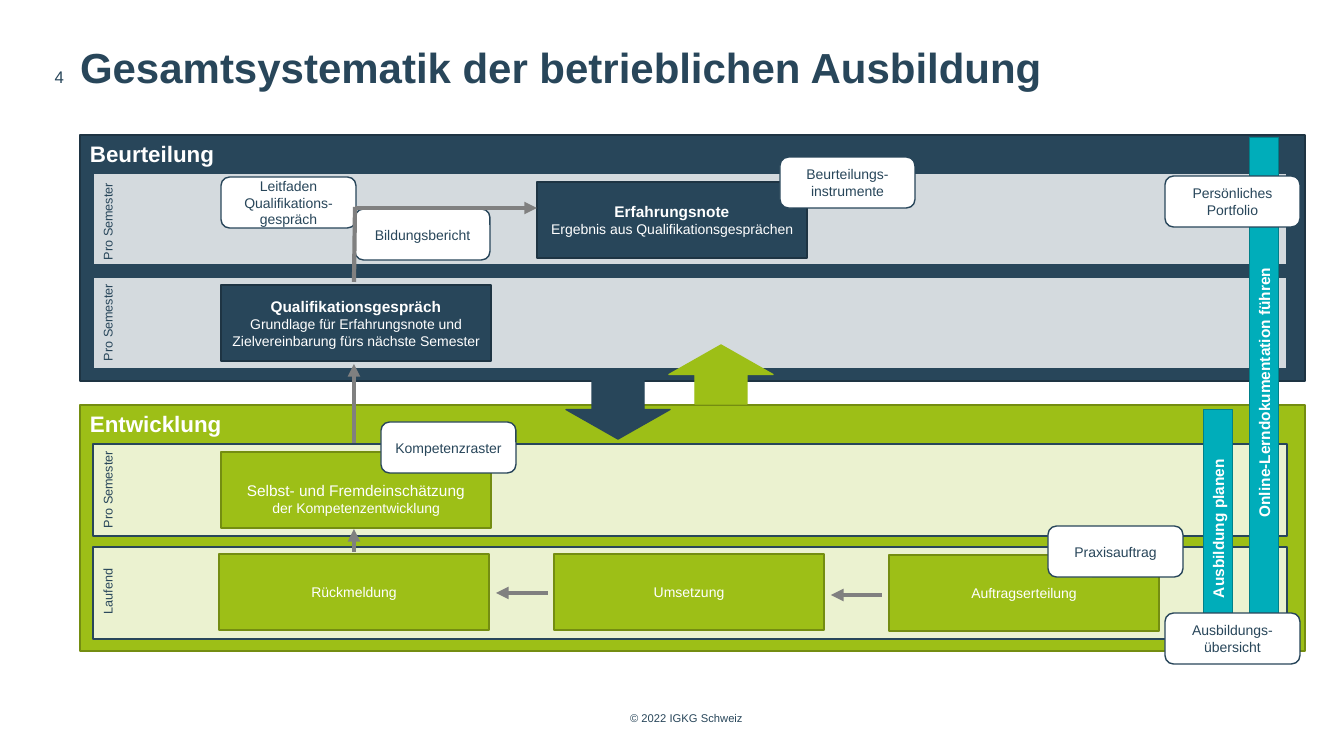
from lxml import etree
from pptx import Presentation
from pptx.dml.color import RGBColor
from pptx.enum.shapes import MSO_CONNECTOR, MSO_SHAPE
from pptx.enum.text import MSO_ANCHOR, PP_ALIGN
from pptx.oxml.ns import qn
from pptx.util import Pt

PX = 9071  # EMU per px
RECT, ROUND = MSO_SHAPE.RECTANGLE, MSO_SHAPE.ROUNDED_RECTANGLE
DOWN, STRAIGHT = MSO_SHAPE.DOWN_ARROW, MSO_CONNECTOR.STRAIGHT
TOP, MIDDLE, BOTTOM = MSO_ANCHOR.TOP, MSO_ANCHOR.MIDDLE, MSO_ANCHOR.BOTTOM
LEFT, CENTER, RIGHT = PP_ALIGN.LEFT, PP_ALIGN.CENTER, PP_ALIGN.RIGHT
NAVY, NAVY_EDGE = "28465A", "1E3443"
GREEN, GREEN_EDGE = "9DBF17", "748D11"
TEAL, TEAL_EDGE = "00ADBA", "00808A"
WHITE, GRAY = "FFFFFF", "808080"
color = RGBColor.from_string

prs = Presentation()
prs.slide_width, prs.slide_height = 1344 * PX, 756 * PX
s = prs.slides.add_slide(prs.slide_layouts[5])


def add_box(kind, x, y, w, h, fill, edge):
    sp = s.shapes.add_shape(kind, x * PX, y * PX, w * PX, h * PX)
    sp.shadow.inherit = False
    sp.fill.solid()
    sp.fill.fore_color.rgb = color(fill)
    sp.line.color.rgb = color(edge)
    sp.line.width = Pt(1)
    return sp


def write(sp, lines, ink, align=CENTER, anchor=MIDDLE, inset=True):
    """Fill a shape with lines of (text, size, bold)."""
    tf = sp.text_frame
    tf.word_wrap = True
    tf.vertical_anchor = anchor
    if not inset:
        tf.margin_left = tf.margin_top = tf.margin_right = tf.margin_bottom = 0
    for i, (text, size, bold) in enumerate(lines):
        p = tf.add_paragraph() if i else tf.paragraphs[0]
        p.text = text
        p.alignment = align
        p.font.name, p.font.size, p.font.bold = "Arial", Pt(size), bold
        p.font.color.rgb = color(ink)
    return tf


# Title, slide number and footer
title = s.shapes.title
title.left, title.top, title.width, title.height = 80 * PX, 47 * PX, 1225 * PX, 64 * PX
tf = write(title, [("Gesamtsystematik der betrieblichen Ausbildung", 30, True)],
           NAVY, LEFT, TOP, inset=False)
tf.paragraphs[0].line_spacing = Pt(32)

number = s.shapes.add_textbox(0, 66 * PX, 64 * PX, 21 * PX)
tf = write(number, [("4", 12, False)], NAVY, RIGHT, BOTTOM, inset=False)
tf.paragraphs[0].line_spacing = Pt(18)

footer = s.shapes.add_textbox(610 * PX, 711 * PX, 153 * PX, 13 * PX)
write(footer, [("© 2022 IGKG Schweiz", 8, False)], NAVY, CENTER, TOP, inset=False)

# Two panels
for text, y, fill, edge in [("Beurteilung", 135, NAVY, NAVY_EDGE),
                            ("Entwicklung", 405, GREEN, GREEN_EDGE)]:
    panel = add_box(RECT, 80, y, 1225, 246, fill, edge)
    write(panel, [(text, 16, True)], WHITE, LEFT, TOP)

# Translucent bands with rotated labels
for text, y, label_y in [("Pro Semester", 173, 209), ("Pro Semester", 277, 310),
                         ("Pro Semester", 444, 477), ("Laufend", 547, 579)]:
    band = add_box(RECT, 93, y, 1194, 92, WHITE, NAVY)
    rgb = band.fill._xPr.find(".//" + qn("a:srgbClr"))
    etree.SubElement(rgb, qn("a:alpha"), val="80000")
    label = s.shapes.add_textbox(36 * PX, label_y * PX, 143 * PX, 25 * PX)
    label.rotation = 270
    write(label, [(text, 9, False)], NAVY, CENTER, TOP)

# Vertical teal bars
for text, x, y, w in [("Online-Lerndokumentation führen", 1009, 378, 510),
                      ("Ausbildung planen", 1099, 514, 238)]:
    bar = add_box(RECT, x, y, w, 29, TEAL, TEAL_EDGE)
    bar.rotation = 270
    write(bar, [(text, 11, True)], WHITE)

# Process steps
steps = [
    (221, 285, NAVY, NAVY_EDGE, [
        ("Qualifikationsgespräch", 11, True),
        ("Grundlage für Erfahrungsnote und Zielvereinbarung fürs nächste Semester", 10, False)]),
    (537, 182, NAVY, NAVY_EDGE, [
        ("Erfahrungsnote", 11, True),
        ("Ergebnis aus Qualifikationsgesprächen", 10, False)]),
    (889, 555, GREEN, GREEN_EDGE, [("Auftragserteilung", 10, False)]),
    (554, 554, GREEN, GREEN_EDGE, [("Umsetzung", 10, False)]),
    (219, 554, GREEN, GREEN_EDGE, [("Rückmeldung", 10, False)]),
    (221, 452, GREEN, GREEN_EDGE, [
        ("Selbst- und Fremdeinschätzung", 11, False),
        ("der Kompetenzentwicklung", 10, False)]),
]
for x, y, fill, edge, lines in steps:
    tf = write(add_box(RECT, x, y, 270, 76, fill, edge), lines, WHITE)
tf.margin_top = 22 * PX  # keeps the last step's text clear of its tag

# Instrument tags
for text, x, y in [("Ausbildungs-übersicht", 1165, 613), ("Praxisauftrag", 1048, 526),
                   ("Kompetenzraster", 381, 422), ("Bildungsbericht", 355, 209),
                   ("Leitfaden Qualifikations-gespräch", 221, 177),
                   ("Beurteilungs-instrumente", 780, 157),
                   ("Persönliches Portfolio", 1165, 176)]:
    write(add_box(ROUND, x, y, 135, 51, WHITE, NAVY), [(text, 10, False)], NAVY)

# Flow arrows
for x1, y1, x2, y2, head in [(882, 595, 831, 595, True), (548, 593, 496, 593, True),
                             (354, 552, 354, 529, True), (354, 443, 354, 364, True),
                             (355, 208, 537, 208, True), (355, 207, 354, 282, False)]:
    flow = s.shapes.add_connector(STRAIGHT, x1 * PX, y1 * PX, x2 * PX, y2 * PX)
    flow.line.color.rgb = color(GRAY)
    flow.line.width = Pt(3)
    if head:
        etree.SubElement(flow.line._get_or_add_ln(), qn("a:tailEnd"), type="triangle")
    etree.SubElement(flow._element.spPr, qn("a:effectLst"))

# Block arrows between the panels
for x, y, fill, turn in [(566, 380, NAVY, 0), (669, 345, GREEN, 180)]:
    add_box(DOWN, x, y, 104, 59, fill, fill).rotation = turn

prs.save("out.pptx")
